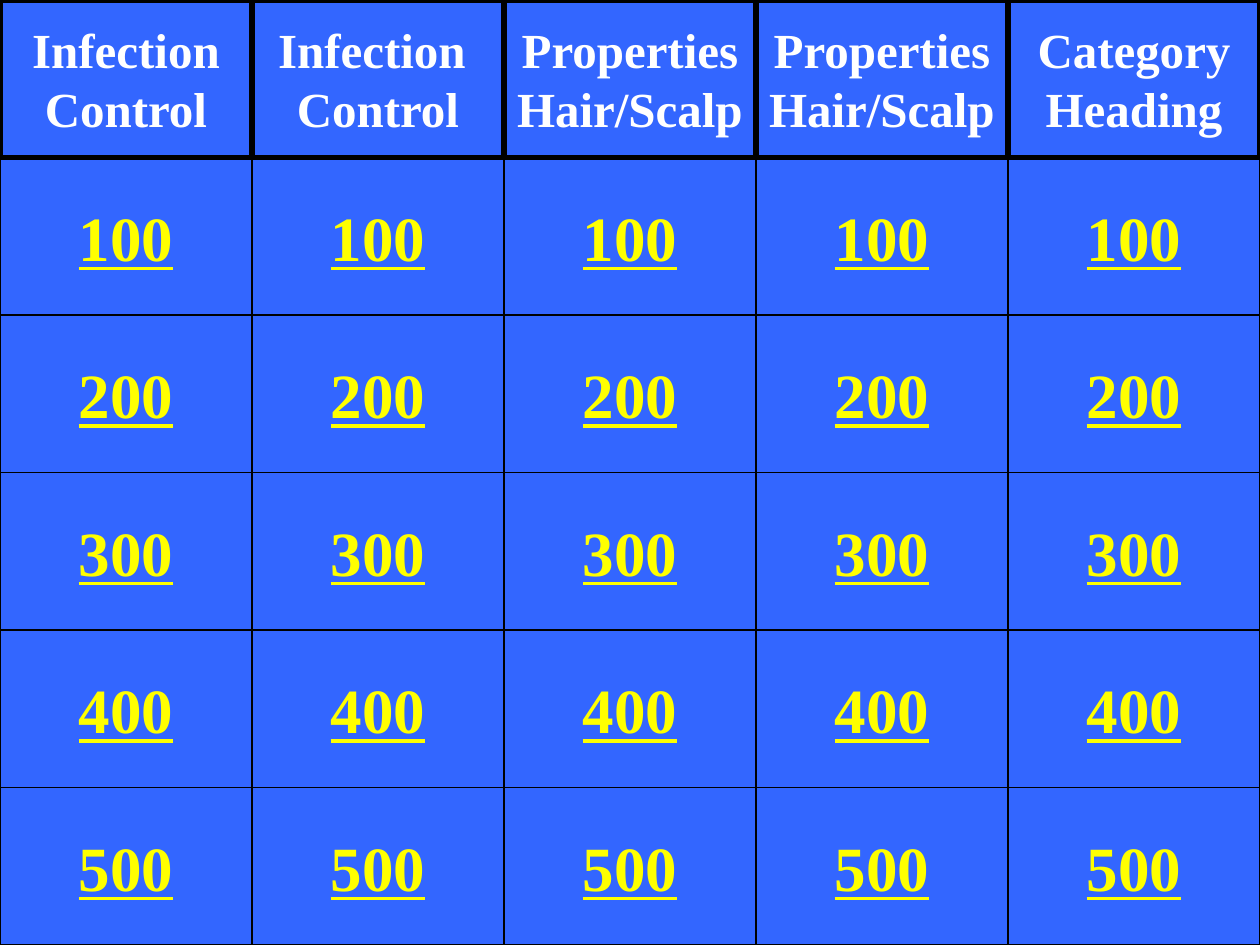
import pptx
import pptx.util
from pptx.dml.color import RGBColor
from pptx.enum.shapes import MSO_SHAPE
from pptx.enum.text import MSO_ANCHOR, PP_ALIGN

# Content
CATEGORIES = [
    ("Infection", "Control"),
    ("Infection ", "Control"),
    ("Properties", "Hair/Scalp"),
    ("Properties", "Hair/Scalp"),
    ("Category", "Heading"),
]
POINTS = ["100", "200", "300", "400", "500"]

# Look
COLORS = {"board": "3366FF", "border": "000000", "heading": "FFFFFF", "points": "FFFF00"}
FONT = "Times New Roman"
PX = 9525  # EMU per px, 96 px to the inch
SLIDE_WIDTH, SLIDE_HEIGHT = 960, 720
CELL_WIDTH = SLIDE_WIDTH // len(CATEGORIES)
CELL_HEIGHT = SLIDE_HEIGHT // (len(POINTS) + 1)


def color(name):
    return RGBColor.from_string(COLORS[name])


def add_cell(slide, column, row, kind, lines, text_color, size, border, underline=None):
    shape = slide.shapes.add_shape(
        kind, column * CELL_WIDTH * PX, row * CELL_HEIGHT * PX,
        CELL_WIDTH * PX, CELL_HEIGHT * PX)
    shape.shadow.inherit = False
    shape.fill.solid()
    shape.fill.fore_color.rgb = color("board")
    shape.line.color.rgb = color("border")
    shape.line.width = pptx.util.Pt(border)

    frame = shape.text_frame
    frame.word_wrap = False
    frame.vertical_anchor = MSO_ANCHOR.MIDDLE
    for index, text in enumerate(lines):
        paragraph = frame.add_paragraph() if index else frame.paragraphs[0]
        paragraph.alignment = PP_ALIGN.CENTER
        run = paragraph.add_run()
        run.text = text
        run.font.name = FONT
        run.font.size = pptx.util.Pt(size)
        run.font.bold = True
        run.font.underline = underline
        run.font.color.rgb = color(text_color)


def main():
    presentation = pptx.Presentation()
    presentation.slide_width = SLIDE_WIDTH * PX
    presentation.slide_height = SLIDE_HEIGHT * PX
    slide = presentation.slides.add_slide(presentation.slide_layouts[6])
    slide.background.fill.solid()
    slide.background.fill.fore_color.rgb = color("board")

    # Point buttons
    for column in range(len(CATEGORIES)):
        for row, points in enumerate(POINTS, start=1):
            add_cell(slide, column, row, MSO_SHAPE.ACTION_BUTTON_CUSTOM, [points],
                     "points", 36, 0.75, underline=True)

    # Category headings, in front of the buttons
    for column, lines in enumerate(CATEGORIES):
        add_cell(slide, column, 0, MSO_SHAPE.RECTANGLE, lines, "heading", 28, 3)

    presentation.save("out.pptx")


if __name__ == "__main__":
    main()
